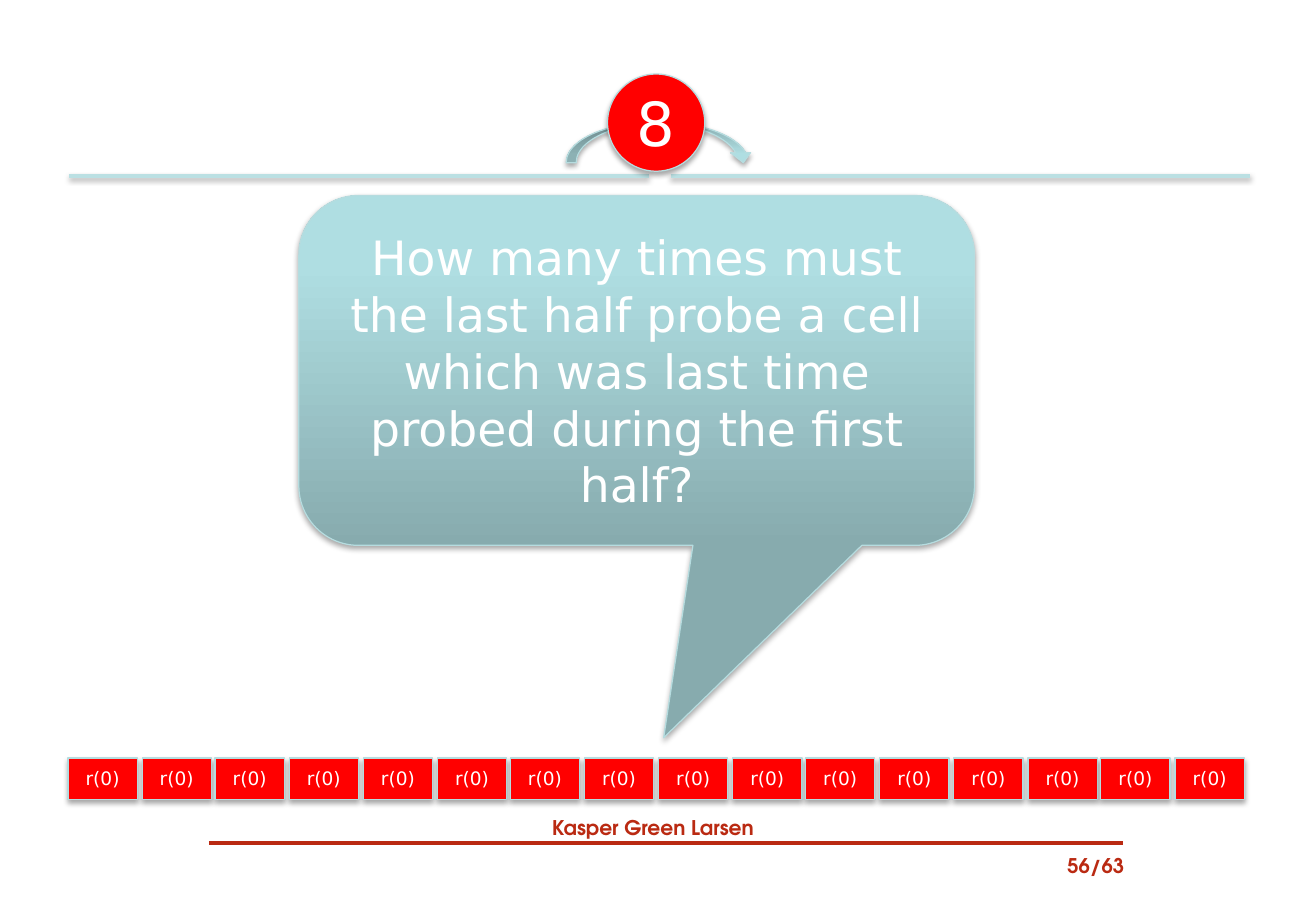
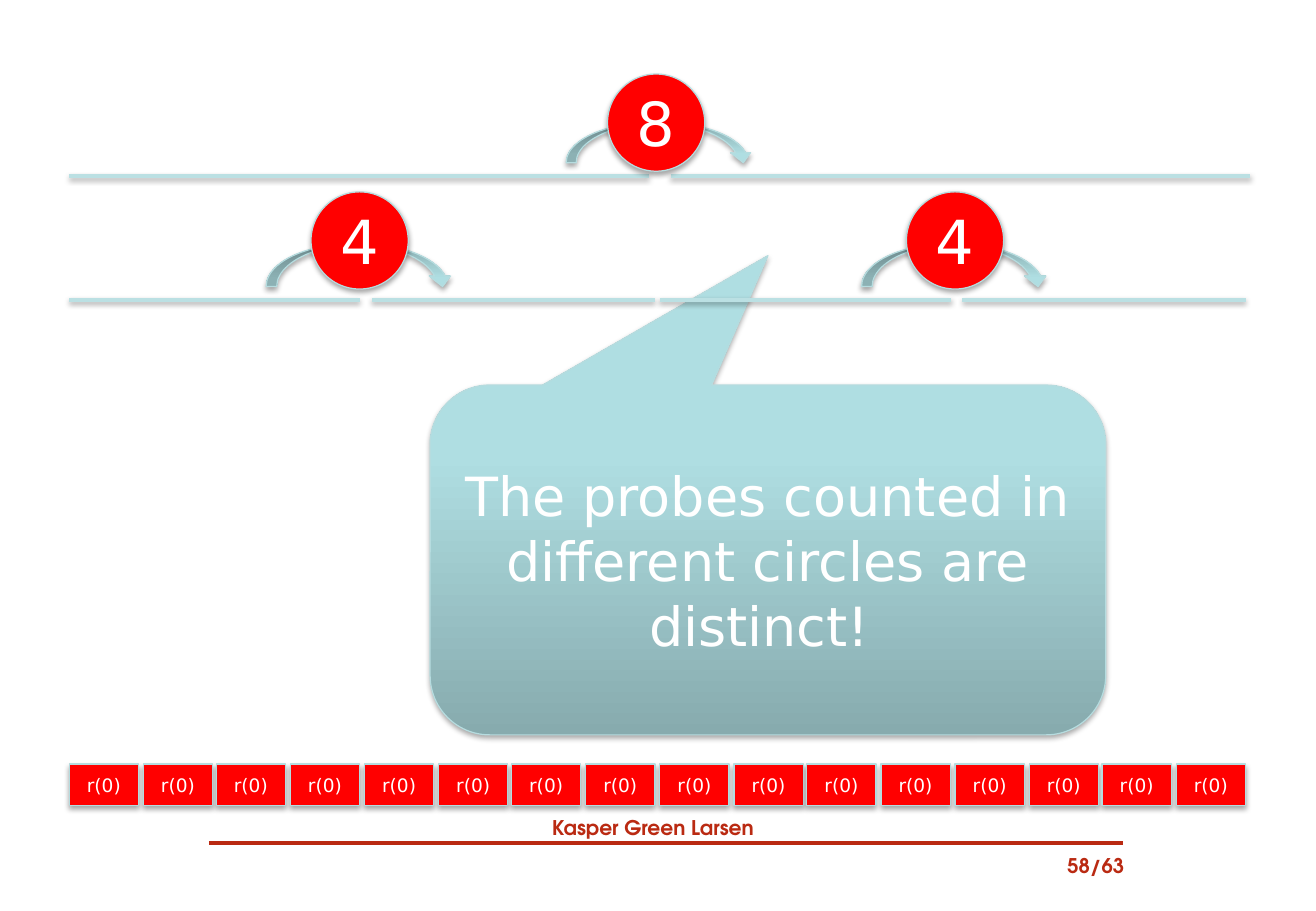
from copy import deepcopy

from lxml import etree
from pptx import Presentation
from pptx import util as u
from pptx.dml import color
from pptx.enum import shapes, text
from pptx.oxml import ns

PX = 9144
WIDTH, HEIGHT = 1083, 750
FORM = shapes.MSO_SHAPE
ALIGN = text.PP_ALIGN


def px(length):
    return u.Emu(length * PX)


def rgb(hex_code):
    return color.RGBColor.from_string(hex_code)


class Deck:
    RED, BRICK, WHITE = "FF0000", "BA2A12", "FFFFFF"
    EDGE, RULE = "B6DCDF", "BBE0E3"
    TEAL = ((0, "87ABAE"), (0.8, "AFDEE2"), (1, "AFE0E4"))
    BODY_FONT, FOOTER_FONT = "DejaVu Sans", "TeX Gyre Adventor"

    def __init__(self):
        self.prs = Presentation()
        self.prs.slide_width, self.prs.slide_height = px(WIDTH), px(HEIGHT)

    def new_slide(self, page):
        self.slide = self.prs.slides.add_slide(self.prs.slide_layouts[6])
        self.footer("Kasper Green Larsen", 53, 666, 969, ALIGN.CENTER)
        self.footer(page, 837, 698, 98, ALIGN.RIGHT)
        self.rule(172, 924, 694, self.BRICK, 2.25)

    def set_words(self, frame, words, size, hex_code, font, align=ALIGN.CENTER, bold=False):
        frame.text = words
        frame.word_wrap = True
        paragraph = frame.paragraphs[0]
        paragraph.alignment = align
        for run in paragraph.runs:
            run.font.size, run.font.name, run.font.bold = u.Pt(size), font, bold
            run.font.color.rgb = rgb(hex_code)

    def footer(self, words, x, y, w, align):
        frame = self.slide.shapes.add_textbox(px(x), px(y), px(w), px(30)).text_frame
        self.set_words(frame, words, 12, self.BRICK, self.FOOTER_FONT, align, True)
        frame.auto_size = text.MSO_AUTO_SIZE.SHAPE_TO_FIT_TEXT

    def shade(self, item, alpha, distance):
        props = item.element.spPr
        effects = props.find(ns.qn("a:effectLst"))
        if effects is None:
            effects = etree.SubElement(props, ns.qn("a:effectLst"))
        if alpha:
            shadow = etree.SubElement(
                effects, ns.qn("a:outerShdw"), blurRad="40000", dist=str(distance),
                dir="5400000", rotWithShape="0")
            black = etree.SubElement(shadow, ns.qn("a:srgbClr"), val="000000")
            etree.SubElement(black, ns.qn("a:alpha"), val=str(alpha * 1000))

    def rule(self, x1, x2, y, hex_code, weight, alpha=0):
        line = self.slide.shapes.add_connector(
            shapes.MSO_CONNECTOR.STRAIGHT, px(x1), px(y), px(x2), px(y))
        line.line.color.rgb = rgb(hex_code)
        line.line.width = u.Pt(weight)
        self.shade(line, alpha, 20000)

    def intervals(self, y, *spans):
        for left, right in spans:
            self.rule(left, right, y, self.RULE, 2, 38)

    def form(self, kind, x, y, w, h, gradient=False):
        item = self.slide.shapes.add_shape(kind, px(x), px(y), px(w), px(h))
        if gradient:
            item.fill.gradient()
            item.fill.gradient_angle = 90
            stops = item.element.spPr.find(".//" + ns.qn("a:gsLst"))
            stops.insert(1, deepcopy(stops[0]))
            for stop, (position, hex_code) in zip(item.fill.gradient_stops, self.TEAL):
                stop.position = position
                stop.color.rgb = rgb(hex_code)
        else:
            item.fill.solid()
            item.fill.fore_color.rgb = rgb(self.RED)
        item.line.color.rgb = rgb(self.EDGE)
        item.line.width = u.Pt(0.75)
        item.shadow.inherit = False
        self.shade(item, 35, 23000)
        return item

    def label(self, item, words, size):
        item.text_frame.vertical_anchor = text.MSO_ANCHOR.MIDDLE
        self.set_words(item.text_frame, words, size, self.WHITE, self.BODY_FONT)

    def jump(self, x, y, h):
        arrow = self.form(FORM.CURVED_UP_ARROW, x, y, 154, h, gradient=True)
        arrow.element.spPr.find(ns.qn("a:xfrm")).set("flipV", "1")

    def count(self, number, x, y):
        self.label(self.form(FORM.OVAL, x, y, 80, 80), number, 36)

    def callout(self, words, size, x, y, tip):
        bubble = self.form(FORM.ROUNDED_RECTANGULAR_CALLOUT, x, y, 556, 288, gradient=True)
        for index, value in enumerate((*tip, 0.17)):
            bubble.adjustments[index] = value
        self.label(bubble, words, size)

    def cells(self, x, y, total=16, reach=911):
        for index in range(total):
            left = x + round(index * reach / (total - 1))
            cell = self.form(FORM.RECTANGLE, left, y, 57, 34)
            frame = cell.text_frame
            frame.margin_left = frame.margin_right = 0
            frame.margin_top = frame.margin_bottom = 0
            self.label(cell, "r(0)", 11)

    def root_intervals(self):
        self.intervals(145, (552, 1029), (57, 534))

    def root_count(self):
        self.jump(466, 101, 33)
        self.count("8", 500, 61)


def main():
    deck = Deck()

    deck.new_slide("56/63")
    deck.root_intervals()
    deck.root_count()
    deck.callout(
        "How many times must the last half probe a cell which was last time "
        "probed during the first half?", 28, 246, 161, (0.04, 1.05))
    deck.cells(56, 624)

    deck.new_slide("58/63")
    halves = (219, 709)
    for left in halves:
        deck.jump(left, 201, 35)
    for left in halves:
        deck.count("4", left + 37, 158)
    deck.callout("The probes counted in different circles are distinct! ",
                 32, 354, 317, (0, -0.87))
    deck.cells(57, 629)
    deck.root_intervals()
    deck.intervals(247, (306, 539), (57, 296), (792, 1025), (543, 783))
    deck.root_count()

    deck.prs.save("out.pptx")


if __name__ == "__main__":
    main()
